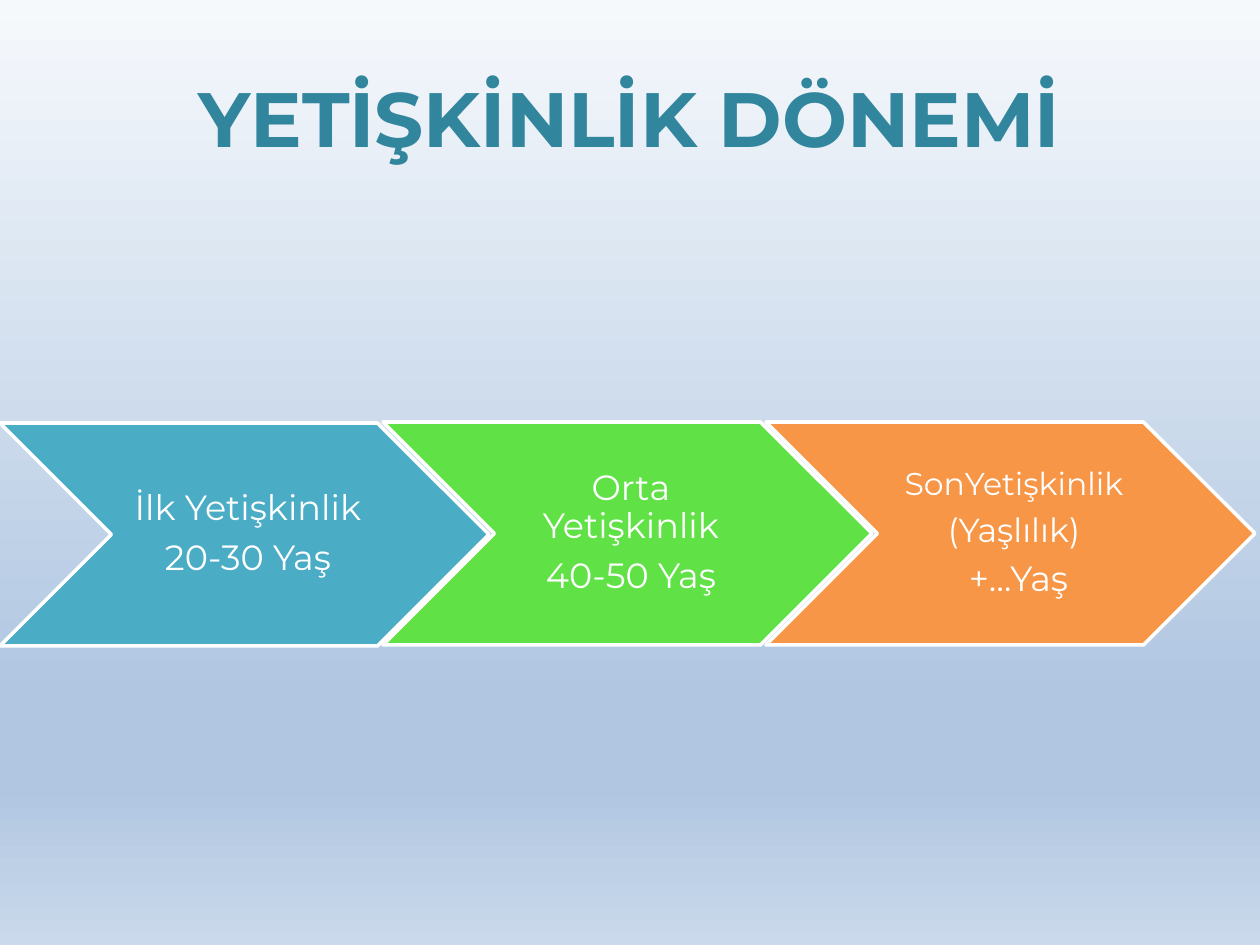
from dataclasses import dataclass

from lxml import etree
from pptx import Presentation
from pptx.dml.color import RGBColor
from pptx.enum.shapes import MSO_SHAPE
from pptx.enum.text import MSO_ANCHOR, PP_ALIGN
from pptx.oxml.ns import qn
from pptx.util import Emu, Pt

CHEVRON = MSO_SHAPE.CHEVRON
MIDDLE = MSO_ANCHOR.MIDDLE
CENTER = PP_ALIGN.CENTER
EMU_PER_PX = 914400 / 126


@dataclass(frozen=True)
class Theme:
    font: str = "Montserrat"
    title_color: str = "31859C"
    title_size: int = 44
    light: str = "FFFFFF"
    outline_width: int = 2
    line_spacing: float = 0.9
    space_after: float = 0.35
    # (position in percent, colour) from top to bottom
    background: tuple = ((0, "F6F9FC"), (74, "B0C6E1"), (83, "B0C6E1"), (100, "CAD9EB"))


THEME = Theme()

# (top, fill, ((text, size), ...))
STAGES = (
    (423, "4BACC6", (("İlk Yetişkinlik", 20), ("20-30 Yaş", 20))),
    (422, "60E146", (("Orta Yetişkinlik", 20), ("40-50 Yaş", 20))),
    (422, "F79646", (("SonYetişkinlik", 18), ("(Yaşlılık)", 19), (" +…Yaş", 20))),
)
STAGE_WIDTH, STAGE_HEIGHT, STAGE_STEP = 489, 223, 383
LABEL_OFFSET, LABEL_WIDTH = 112, 265


def px(value):
    return Emu(round(value * EMU_PER_PX))


def box(left, top, width, height):
    return px(left), px(top), px(width), px(height)


def set_background(slide):
    """Fill the slide with the theme's vertical gradient."""
    fill = slide.background.fill
    fill.gradient()
    gradient = slide.background._cSld.find(".//" + qn("a:gradFill"))
    stops = gradient.find(qn("a:gsLst"))
    for stop in list(stops):
        stops.remove(stop)
    for position, color in THEME.background:
        stop = etree.SubElement(stops, qn("a:gs"), pos=str(position * 1000))
        etree.SubElement(stop, qn("a:srgbClr"), val=color)
    gradient.find(qn("a:lin")).set("ang", "5400000")


def format_paragraph(paragraph, size, color, bold=False):
    paragraph.alignment = CENTER
    for run in paragraph.runs:
        run.font.name = THEME.font
        run.font.size = Pt(size)
        run.font.bold = bold
        run.font.color.rgb = RGBColor.from_string(color)


def add_text_box(slide, bounds, text):
    text_frame = slide.shapes.add_textbox(*bounds).text_frame
    text_frame.word_wrap = True
    text_frame.vertical_anchor = MIDDLE
    text_frame.text = text
    return text_frame


def add_title(slide, text):
    text_frame = add_text_box(slide, box(63, 38, 1134, 157), text)
    format_paragraph(text_frame.paragraphs[0], THEME.title_size, THEME.title_color, bold=True)


def add_chevron(slide, left, top, color):
    shape = slide.shapes.add_shape(CHEVRON, *box(left, top, STAGE_WIDTH, STAGE_HEIGHT))
    shape.shadow.inherit = False
    shape.fill.solid()
    shape.fill.fore_color.rgb = RGBColor.from_string(color)
    shape.line.color.rgb = RGBColor.from_string(THEME.light)
    shape.line.width = Pt(THEME.outline_width)


def add_label(slide, left, top, lines):
    text = "\n".join(line for line, _ in lines)
    text_frame = add_text_box(slide, box(left, top, LABEL_WIDTH, STAGE_HEIGHT), text)
    text_frame.margin_left = px(11)
    text_frame.margin_right = text_frame.margin_top = text_frame.margin_bottom = px(4)
    for paragraph, (_, size) in zip(text_frame.paragraphs, lines):
        format_paragraph(paragraph, size, THEME.light)
        paragraph.line_spacing = THEME.line_spacing
        paragraph.space_after = Pt(size * THEME.space_after)


def main():
    presentation = Presentation()
    presentation.slide_width, presentation.slide_height = px(1260), px(945)
    slide = presentation.slides.add_slide(presentation.slide_layouts[6])
    set_background(slide)
    add_title(slide, "YETİŞKİNLİK DÖNEMİ")
    for index, (top, color, lines) in enumerate(STAGES):
        left = index * STAGE_STEP
        add_chevron(slide, left, top, color)
        add_label(slide, left + LABEL_OFFSET, top, lines)
    presentation.save("out.pptx")


if __name__ == "__main__":
    main()
